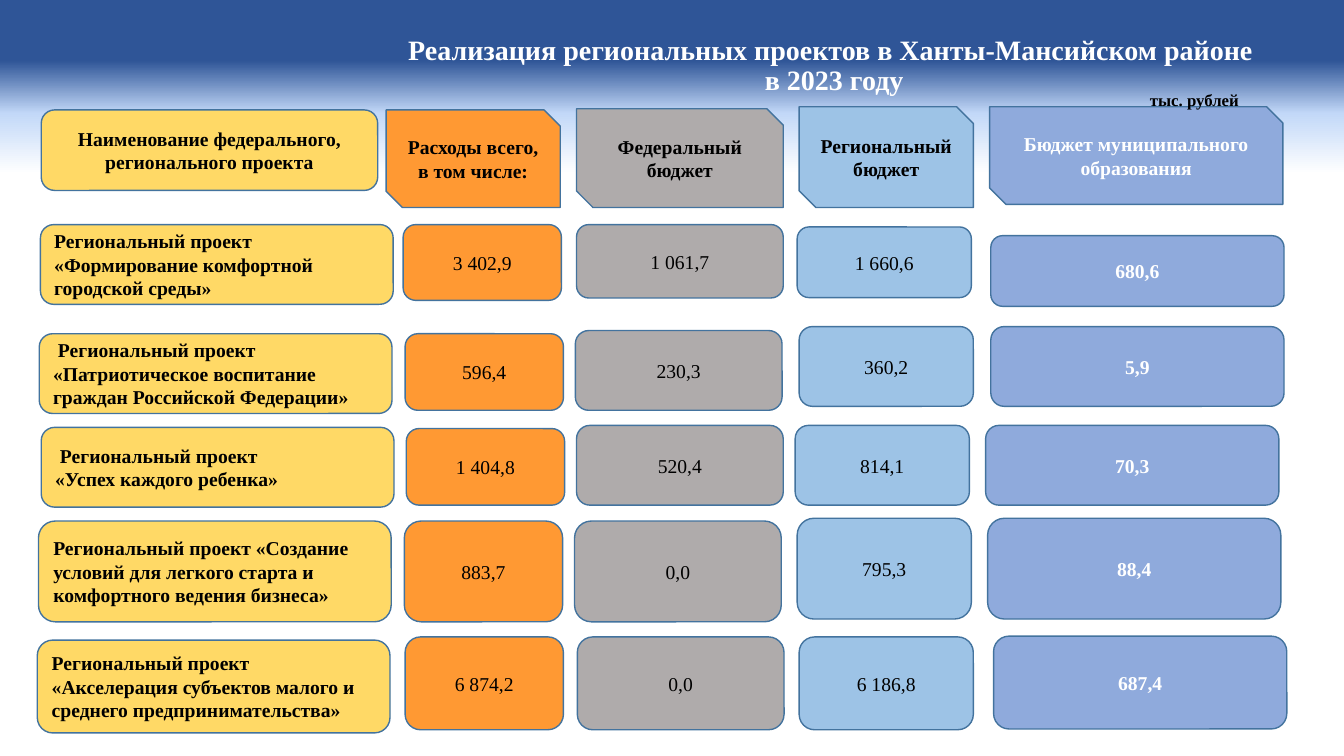
from copy import deepcopy
from dataclasses import dataclass

from pptx import Presentation
from pptx import util as u
from pptx.dml.color import RGBColor
from pptx.enum import shapes, text
from pptx.oxml.ns import qn


@dataclass(frozen=True)
class Theme:
    font: str = "Times New Roman"
    title_size: int = 20
    body_size: int = 14
    unit_size: int = 12
    dark: str = "000000"
    light: str = "FFFFFF"
    outline: str = "43739E"
    columns: tuple = ("FFD966", "FF9933", "AFABAB", "9DC3E6", "8FAADC")
    background: tuple = ((0.08, "2F5597"), (0.15, "C2D8F8"), (0.23, "FFFFFF"))


THEME = Theme()
CENTER, LEFT = text.PP_ALIGN.CENTER, text.PP_ALIGN.LEFT
ROUNDED = shapes.MSO_SHAPE.ROUNDED_RECTANGLE
SNIPPED = shapes.MSO_SHAPE.SNIP_2_DIAG_RECTANGLE


def write(frame, paragraphs, *, size=THEME.body_size, color=THEME.dark, bold=True,
          align=CENTER, anchor=text.MSO_ANCHOR.MIDDLE, spacing=None):
    """Fill a text frame, one paragraph per item; a newline is a line break."""
    frame.word_wrap = True
    frame.vertical_anchor = anchor
    for index, content in enumerate(paragraphs):
        paragraph = frame.add_paragraph() if index else frame.paragraphs[0]
        paragraph.text = content
        paragraph.alignment = align
        if spacing:
            paragraph.line_spacing = spacing
        for run in paragraph.runs:
            run.font.name = THEME.font
            run.font.size = u.Pt(size)
            run.font.bold = bold
            run.font.color.rgb = RGBColor.from_string(color)


class BudgetSlide:
    def __init__(self, deck, theme):
        self.theme = theme
        self.slide = deck.slides.add_slide(deck.slide_layouts[6])

    def background(self):
        fill = self.slide.background.fill
        fill.gradient()
        fill.gradient_angle = 270
        stops = next(self.slide.element.iter(qn("a:gsLst")))
        stops.append(deepcopy(stops[-1]))
        for stop, (position, color) in zip(fill.gradient_stops, self.theme.background):
            stop.position = position
            stop.color.rgb = RGBColor.from_string(color)

    def label(self, box, paragraphs, **style):
        area = self.slide.shapes.add_textbox(*map(u.Cm, box))
        write(area.text_frame, paragraphs, **style)

    def card(self, kind, box, column, paragraphs, **style):
        card = self.slide.shapes.add_shape(kind, *map(u.Cm, box))
        card.shadow.inherit = False
        card.fill.solid()
        card.fill.fore_color.rgb = RGBColor.from_string(self.theme.columns[column])
        card.line.color.rgb = RGBColor.from_string(self.theme.outline)
        card.line.width = u.Pt(1)
        if column == 4:
            style["color"] = self.theme.light
        write(card.text_frame, paragraphs, **style)


# Column headings: text and box in cm
HEADINGS = [
    ("Наименование федерального, регионального проекта", (1.04, 2.77, 8.48, 2.03)),
    ("Расходы всего, в том числе:", (9.73, 2.77, 4.39, 2.46)),
    ("Федеральный бюджет", (14.53, 2.74, 5.21, 2.49)),
    ("Региональный бюджет", (20.14, 2.69, 4.39, 2.54)),
    ("Бюджет муниципального образования", (24.94, 2.69, 7.39, 2.46)),
]
CARD_WIDTHS = (8.89, 3.99, 5.21, 4.39, 7.39)

# Projects: name, amounts, then left edges, tops and heights of the cards in cm
PROJECTS = [
    (["Региональный проект «Формирование комфортной городской среды»"],
     ("3 402,9", "1 061,7", "1 660,6", "680,6"),
     (1.02, 10.16, 14.53, 20.09, 24.97),
     (5.66, 5.66, 5.66, 5.72, 5.94),
     (2.01, 1.91, 1.85, 1.78, 1.78)),
    ([" Региональный проект «Патриотическое воспитание граждан Российской Федерации»"],
     ("596,4", "230,3", "360,2", "5,9"),
     (0.99, 10.21, 14.5, 20.14, 24.97),
     (8.41, 8.41, 8.33, 8.23, 8.23),
     (2.01, 1.93, 2.01, 2.01, 2.01)),
    ([" Региональный проект", "«Успех каждого ребенка»"],
     ("1 404,8", "520,4", "814,1", "70,3"),
     (1.04, 10.24, 14.53, 20.04, 24.84),
     (10.77, 10.8, 10.72, 10.72, 10.72),
     (2.01, 1.93, 2.01, 2.01, 2.01)),
    (["Региональный проект «Создание условий для легкого старта и "
      "комфортного ведения бизнеса»"],
     ("883,7", "0,0", "795,3", "88,4"),
     (0.97, 10.19, 14.48, 20.09, 24.89),
     (13.13, 13.13, 13.13, 13.06, 13.06),
     (2.54,) * 5),
    (["Региональный проект «Акселерация субъектов малого и "
      "среднего предпринимательства»"],
     ("6 874,2", "0,0", "6 186,8", "687,4"),
     (0.94, 10.21, 14.55, 20.14, 25.04),
     (16.13, 16.05, 16.05, 16.05, 16.03),
     (2.34,) * 5),
]


def main():
    deck = Presentation()
    deck.slide_width, deck.slide_height = u.Cm(33.87), u.Cm(19.05)
    page = BudgetSlide(deck, THEME)
    page.background()

    # Heading row
    for column, (heading, box) in enumerate(HEADINGS):
        page.card(SNIPPED if column else ROUNDED, box, column, [heading])

    # Project rows
    for name, amounts, lefts, tops, heights in PROJECTS:
        contents = [name] + [[amount] for amount in amounts]
        boxes = zip(lefts, tops, CARD_WIDTHS, heights)
        for column, (content, box) in enumerate(zip(contents, boxes)):
            page.card(ROUNDED, box, column, content, bold=column in (0, 4),
                      align=CENTER if column else LEFT)

    # Title and unit of measure
    page.label((9.53, 1.02, 22.81, 1.32),
               ["Реализация региональных проектов в Ханты-Мансийском районе\n в 2023 году"],
               size=THEME.title_size, color=THEME.light, spacing=0.9)
    page.label((28.73, 2.13, 3.2, 0.76), ["тыс. рублей"], size=THEME.unit_size,
               align=LEFT, anchor=text.MSO_ANCHOR.TOP)

    deck.save("out.pptx")


if __name__ == "__main__":
    main()
